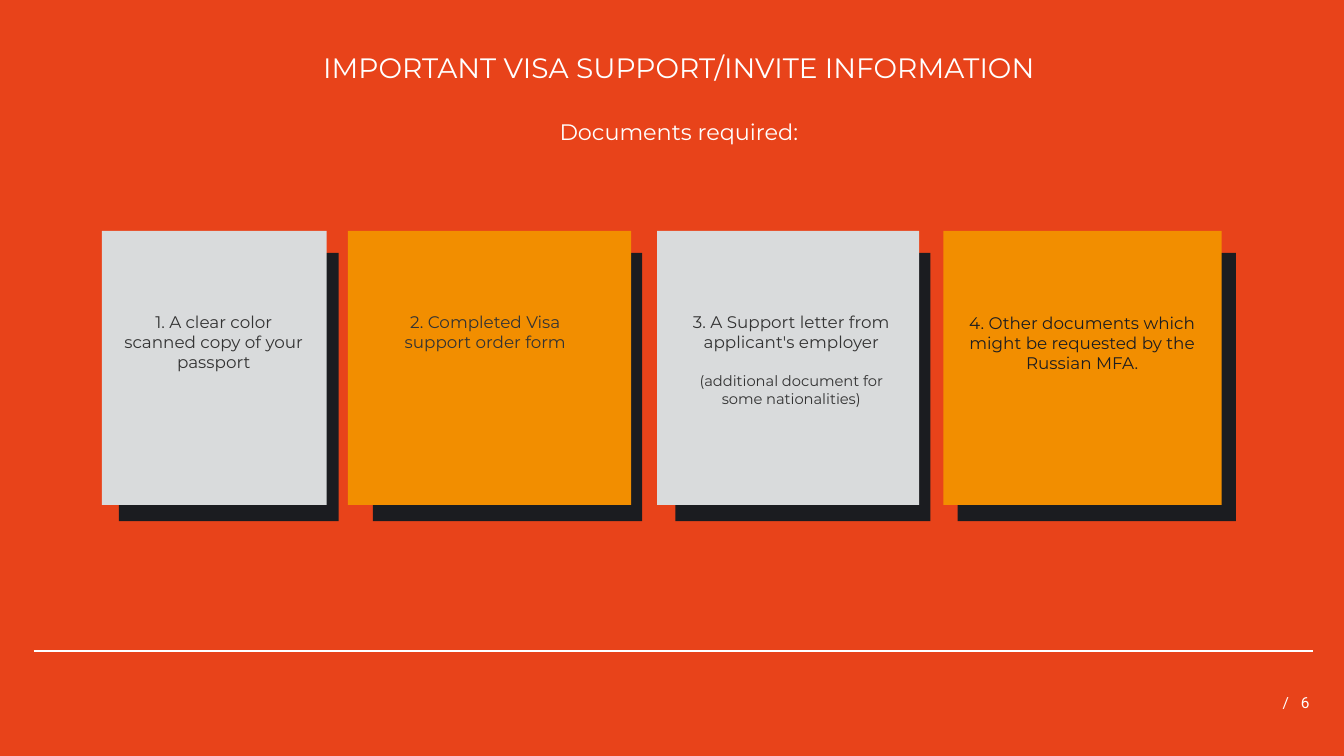
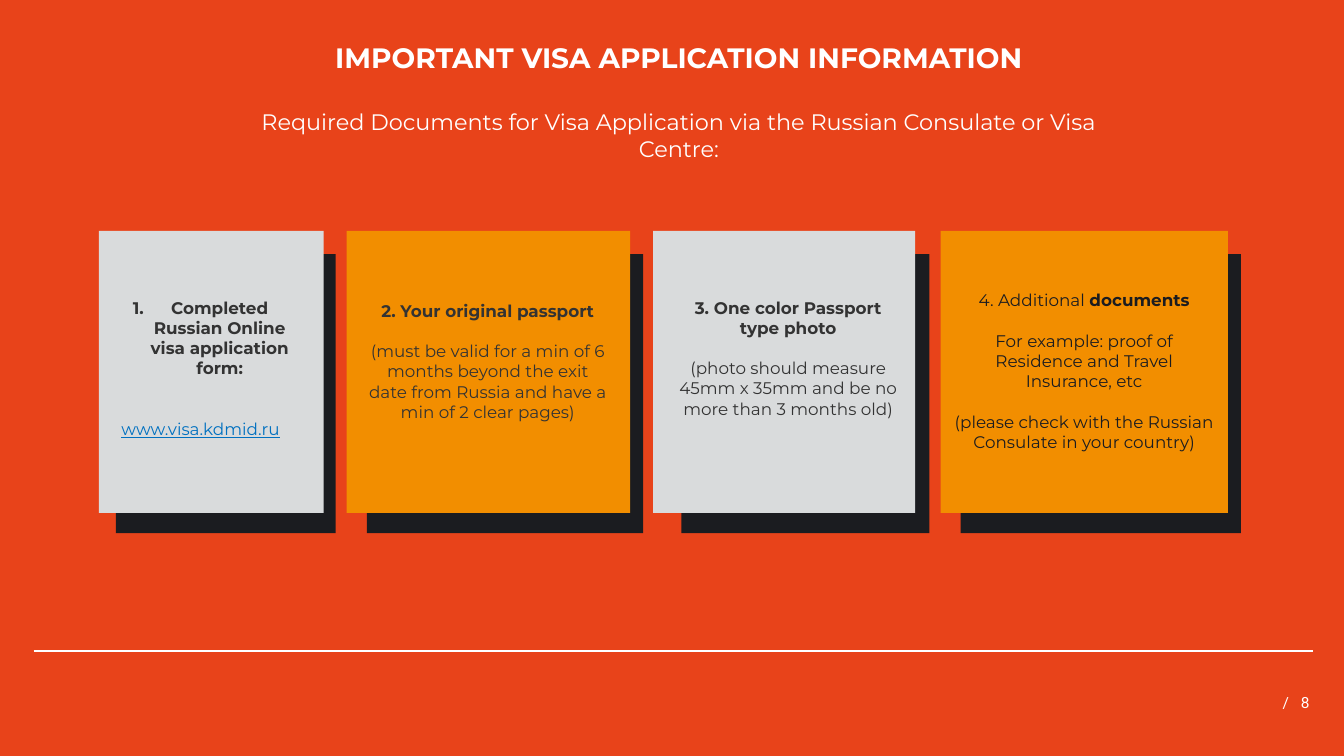
from lxml import etree
from pptx import Presentation, util as u
from pptx.dml.color import RGBColor
from pptx.enum import shapes, text
from pptx.oxml.ns import qn

HUE = {"back": "E8431A", "white": "FFFFFF", "shade": "1B1C20", "gold": "F28E00",
       "grey": "D9DBDC", "ink": "333333", "link": "0070C0"}
MID, LEFT = text.PP_ALIGN.CENTER, text.PP_ALIGN.LEFT

deck = Presentation()
deck.slide_width, deck.slide_height = u.Inches(13.33), u.Inches(7.5)


def span(x, y, w, h):
    """Turn percentages of the slide's size into lengths."""
    wide, high = deck.slide_width / 100, deck.slide_height / 100
    return [int(v) for v in (x * wide, y * high, w * wide, h * high)]


def write(page, area, paras, align=MID, **base):
    """Add a text box; each paragraph is (space before, [(words, format), ...])."""
    frame = page.shapes.add_textbox(*span(*area)).text_frame
    frame.word_wrap = True
    for i, (gap, runs) in enumerate(paras):
        para = frame.add_paragraph() if i else frame.paragraphs[0]
        para.alignment = align
        if gap:
            para.space_before = u.Pt(gap)
        for words, extra in runs:
            run = para.add_run()
            run.text = words
            look = {"name": "Montserrat", "size": 12, "hue": "ink", **base, **extra}
            run.font.color.rgb = RGBColor.from_string(HUE[look.pop("hue")])
            look["size"] = u.Pt(look["size"])
            for key, value in look.items():
                setattr(run.font, key, value)
    return frame


BOLD, DARK = {"bold": True}, {"hue": "shade"}
LINE = 14.6  # one empty line of card text

# Each card: card (left, width), shade (left, width), text (left, top, width), paragraphs
PAGES = [
    {"num": 6, "top": 6, "title": ("IMPORTANT VISA SUPPORT/INVITE INFORMATION", {}),
     "sub": "Documents required:", "high": 36.27, "shade": (33.45, 35.5),
     "cards": [
         ((7.58, 16.73), (8.85, 16.35), (8.33, 40.53, 15.15),
          [(0, [("1. A clear color scanned copy of your passport", {})])]),
         ((25.88, 21.08), (27.75, 20.03), (27.45, 40.53, 17.33),
          [(0, [("2. Completed Visa support order form", {})])]),
         ((48.9, 19.5), (50.25, 18.98), (49.73, 40.53, 18.3),
          [(0, [("3. A Support letter from applicant's employer", {})]),
           (LINE, [("(additional document for some nationalities)", {"size": 10.5})])]),
         ((70.2, 20.7), (71.25, 20.7), (69.83, 40.67, 21.38),
          [(0, [("4. Other documents which might be requested by the Russian MFA.", DARK)])]),
     ]},
    {"num": 8, "top": 4.67, "title": ("IMPORTANT VISA APPLICATION INFORMATION", BOLD),
     "sub": "Required Documents for Visa Application via the Russian Consulate or Visa Centre:",
     "high": 37.33, "shade": (33.6, 36.93),
     "cards": [
         ((7.35, 16.73), (8.63, 16.35), (7.35, 38.67, 15.15),
          [(0, [("Completed Russian Online visa application form:", BOLD)]),
           (2 * LINE, [("www.visa.kdmid.ru", {"hue": "link", "underline": True})])]),
         ((25.8, 21.08), (27.3, 20.55), (26.55, 39.07, 19.5),
          [(0, [("2. Your original passport", BOLD)]),
           (LINE, [("(must be valid for a min of 6 months beyond the exit date "
                    "from Russia and have a min of 2 clear pages)", {})])]),
         ((48.6, 19.5), (50.7, 18.45), (49.5, 38.67, 18.3),
          [(0, [("3. One color Passport type photo", BOLD)]),
           (LINE, [("(photo should measure 45mm x 35mm and be no more than "
                    "3 months old)", {})])]),
         ((69.98, 21.38), (71.48, 20.85), (69.98, 37.73, 21.38),
          [(0, [("4. Additional ", DARK), ("documents", {**DARK, **BOLD})]),
           (LINE, [("For example: proof of Residence and Travel Insurance, etc", DARK)]),
           (LINE, [("(please check with the Russian Consulate in your country)", DARK)])]),
     ]},
]

for data in PAGES:
    page = deck.slides.add_slide(deck.slide_layouts[6])
    page.background.fill.solid()
    page.background.fill.fore_color.rgb = RGBColor.from_string(HUE["back"])

    x, y, w, h = span(2.5, 86.13, 95.2, 0)
    rule = page.shapes.add_connector(shapes.MSO_CONNECTOR.STRAIGHT, x, y, x + w, y)
    rule.line.color.rgb = RGBColor.from_string(HUE["white"])
    rule.line.width = u.Pt(1)
    etree.SubElement(rule._element.spPr, qn("a:effectLst"))

    rects = [(*shade, *data["shade"], "shade") for _, shade, _, _ in data["cards"]]
    rects += [(*card, 30.53, data["high"], ("grey", "gold")[i % 2])
              for i, (card, _, _, _) in enumerate(data["cards"])]
    for x, w, y, h, hue in rects:
        rect = page.shapes.add_shape(shapes.MSO_SHAPE.RECTANGLE, *span(x, y, w, h))
        rect.shadow.inherit = False
        rect.fill.solid()
        rect.fill.fore_color.rgb = RGBColor.from_string(HUE[hue])
        rect.line.fill.background()

    frames = [write(page, (x, y, w, 20), paras)
              for _, _, (x, y, w), paras in data["cards"]]
    if data["num"] == 8:
        props = frames[0].paragraphs[0]._p.get_or_add_pPr()
        props.set("marL", str(u.Inches(0.38)))
        props.set("indent", str(-u.Inches(0.38)))
        etree.SubElement(props, qn("a:buFont"), typeface="+mj-lt")
        etree.SubElement(props, qn("a:buAutoNum"), type="arabicPeriod")

    write(page, (15.9, data["top"], 69.23, 14),
          [(0, [data["title"]]), (24.4, [(data["sub"], {"size": 16})])],
          size=20, hue="white")

    foot = write(page, (94.7, 90.27, 3.5, 5.33), [(0, [(f"/\t{data['num']}", {})])],
                 LEFT, name="Roboto", size=11, hue="white")
    foot.vertical_anchor = text.MSO_ANCHOR.MIDDLE
    stops = etree.SubElement(foot.paragraphs[0]._p.get_or_add_pPr(), qn("a:tabLst"))
    etree.SubElement(stops, qn("a:tab"), pos=str(u.Inches(0.18)), algn="l")

deck.save("out.pptx")
